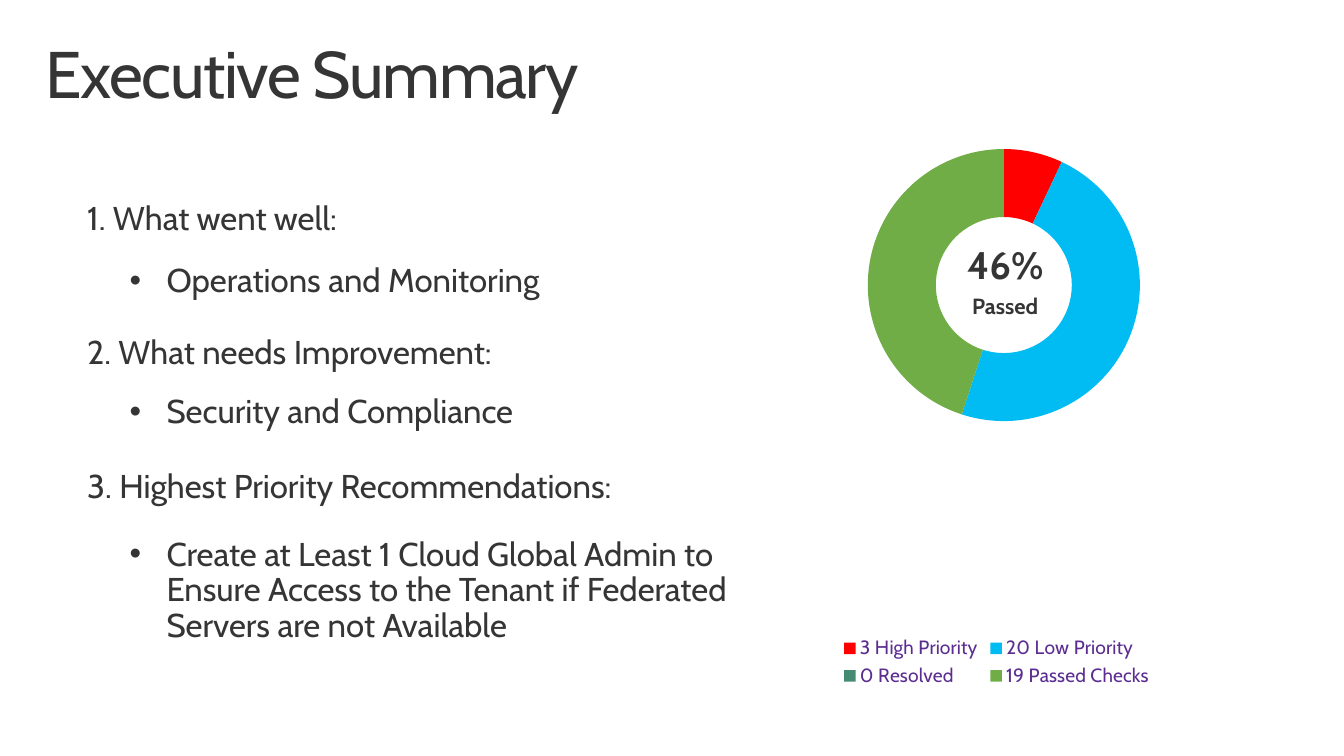
from lxml.etree import SubElement
from pptx import Presentation
from pptx.chart.data import CategoryChartData
from pptx.dml.color import RGBColor
from pptx.enum.chart import XL_CHART_TYPE, XL_LEGEND_POSITION
from pptx.enum.text import PP_ALIGN
from pptx.oxml import parse_xml
from pptx.oxml.ns import nsdecls, qn
from pptx.util import Cm, Pt

FONT = "Cabin"
COLORS = {"text": "353535", "legend": "5B2D91", "high": "FF0000",
          "low": "00BCF2", "resolved": "458B74", "passed": "70AD47"}
TITLE = "Executive Summary"
SECTIONS = [
    ("1. What went well:", "Operations and Monitoring", 6.38),
    ("2. What needs Improvement:", "Security and Compliance", 9.75),
    ("3. Highest Priority Recommendations:",
     "Create at Least 1 Cloud Global Admin to Ensure Access to the Tenant "
     "if Federated Servers are not Available", 13.41),
]
CHECKS = [("3 High Priority", 7, "high"), ("", None, None),
          ("20 Low Priority", 48, "low"), ("", None, None),
          ("0 Resolved", 0, "resolved"), ("", None, None),
          ("19 Passed Checks", 45, "passed")]
SCORE = [("46%", 28), ("Passed", 16)]
HEADING_TOP, HEADING_STEP = 4.78, 3.45


def rgb(name):
    return RGBColor.from_string(COLORS[name])


def style(font, size, color="text", bold=False):
    font.name, font.size, font.bold = FONT, Pt(size), bold
    font.color.rgb = rgb(color)


def add_text(s, box, lines, inset=(0.51, 0.41), after=6, bold=False,
             align=PP_ALIGN.LEFT, bullet=False, spacing=0):
    tf = s.shapes.add_textbox(*[Cm(v) for v in box]).text_frame
    tf.word_wrap = True
    tf.margin_left = tf.margin_right = Cm(inset[0])
    tf.margin_top = tf.margin_bottom = Cm(inset[1])
    for i, (text, size) in enumerate(lines):
        p = tf.add_paragraph() if i else tf.paragraphs[0]
        p.alignment, p.line_spacing, p.space_after = align, 0.9, Pt(after)
        if bullet:
            pPr = p._p.get_or_add_pPr()
            pPr.set("marL", str(Cm(0.95)))
            pPr.set("indent", str(-Cm(0.95)))
            SubElement(pPr, qn("a:buFont")).set("typeface", "Arial")
            SubElement(pPr, qn("a:buChar")).set("char", "•")
        r = p.add_run()
        r.text = text
        style(r.font, size, bold=bold)
        if spacing:
            r._r.get_or_add_rPr().set("spc", str(spacing))


def layout(x, y, w, h, inner=False):
    target = '<c:layoutTarget val="inner"/>' if inner else ""
    return parse_xml(
        f'<c:layout {nsdecls("c")}><c:manualLayout>{target}'
        '<c:xMode val="edge"/><c:yMode val="edge"/>'
        f'<c:x val="{x}"/><c:y val="{y}"/><c:w val="{w}"/><c:h val="{h}"/>'
        '</c:manualLayout></c:layout>')


def add_checks_chart(s):
    data = CategoryChartData()
    data.categories = [label for label, _, _ in CHECKS]
    data.add_series("Series 1", [value for _, value, _ in CHECKS])
    chart = s.shapes.add_chart(XL_CHART_TYPE.DOUGHNUT, Cm(19.48), Cm(1.7),
                               Cm(12.27), Cm(16.08), data).chart
    chart.has_title = False
    style(chart.font, 10)
    plot = chart.plots[0]
    plot.vary_by_categories = True
    plot._element.find(qn("c:holeSize")).set("val", "68")
    area = plot._element.getparent()
    for old in area.findall(qn("c:layout")):
        area.remove(old)
    area.insert(0, layout(0.23, 0.07, 0.57, 0.56, inner=True))

    chart.has_legend = True
    legend = chart.legend
    legend.position = XL_LEGEND_POSITION.BOTTOM
    legend.include_in_layout = False
    style(legend.font, 14, "legend")
    pos = legend._element.find(qn("c:legendPos"))
    pos.addnext(layout(0.21, 0.69, 0.66, 0.22))
    for i, (label, _, color) in reversed(list(enumerate(CHECKS))):
        if label:
            fmt = plot.series[0].points[i].format
            fmt.fill.solid()
            fmt.fill.fore_color.rgb = rgb(color)
            fmt.line.fill.background()
        else:
            pos.addnext(parse_xml(
                f'<c:legendEntry {nsdecls("c")}><c:idx val="{i}"/>'
                '<c:delete val="1"/></c:legendEntry>'))


def main():
    """Build the executive summary slide."""
    prs = Presentation()
    prs.slide_width, prs.slide_height = Cm(34.54), Cm(19.43)
    s = prs.slides.add_slide(prs.slide_layouts[6])
    add_text(s, (0.76, 0.81, 33.02, 2.54), [(TITLE, 48)],
             inset=(0.41, 0.25), after=0, spacing=-100)
    add_checks_chart(s)
    add_text(s, (24.03, 5.92, 3.61, 8.1), SCORE, bold=True,
             align=PP_ALIGN.CENTER)
    for i, (heading, finding, top) in enumerate(SECTIONS):
        add_text(s, (1.73, HEADING_TOP + i * HEADING_STEP, 15.34, 1.75),
                 [(heading, 24)])
        add_text(s, (2.82, top, 17.81, 1.75), [(finding, 24)], bullet=True)
    prs.save("out.pptx")


if __name__ == "__main__":
    main()
